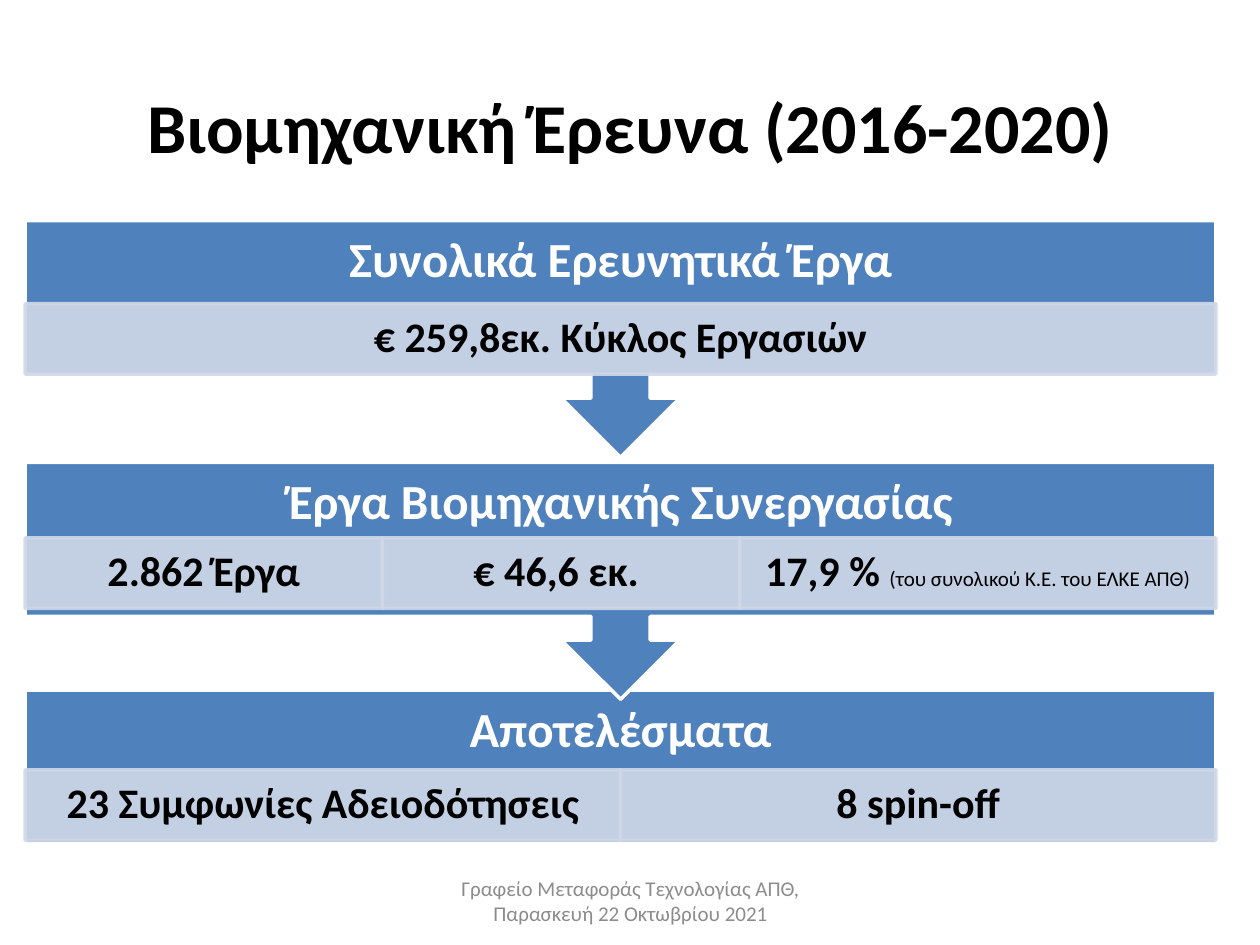
from dataclasses import dataclass
from itertools import accumulate

from lxml.etree import SubElement
from pptx import Presentation
from pptx.dml.color import RGBColor
from pptx.enum.shapes import MSO_SHAPE
from pptx.enum.text import MSO_ANCHOR, PP_ALIGN
from pptx.oxml.ns import qn
from pptx.util import Inches, Pt


@dataclass(frozen=True)
class Theme:
    font: str = "Calibri"
    black: RGBColor = RGBColor(0x00, 0x00, 0x00)
    white: RGBColor = RGBColor(0xFF, 0xFF, 0xFF)
    gray: RGBColor = RGBColor(0x8C, 0x8C, 0x8C)
    blue: RGBColor = RGBColor(0x4F, 0x81, 0xBD)
    pale: RGBColor = RGBColor(0xD0, 0xD8, 0xE8)
    title_size: int = 40
    heading_size: int = 28
    figure_size: int = 24
    small_size: int = 12
    line_width: int = 2
    pale_opacity: int = 90


THEME = Theme()


@dataclass(frozen=True)
class Box:
    left: float
    top: float
    width: float
    height: float

    def emu(self):
        return [Inches(v) for v in (self.left, self.top, self.width, self.height)]


def write_text(shape, runs, color, insets=(0.1, 0.05), spacing=1.0):
    frame = shape.text_frame
    frame.word_wrap = True
    frame.vertical_anchor = MSO_ANCHOR.MIDDLE
    frame.margin_left = frame.margin_right = Inches(insets[0])
    frame.margin_top = frame.margin_bottom = Inches(insets[1])
    paragraph = frame.paragraphs[0]
    paragraph.alignment = PP_ALIGN.CENTER
    paragraph.line_spacing = spacing
    for text, size, bold in runs:
        run = paragraph.add_run()
        run.text = text
        run.font.name = THEME.font
        run.font.size = Pt(size)
        run.font.bold = bold
        run.font.color.rgb = color


def add_label(slide, box, runs, color, **layout):
    write_text(slide.shapes.add_textbox(*box.emu()), runs, color, **layout)


def add_block(slide, kind, box, fill, line, opacity=100):
    shape = slide.shapes.add_shape(kind, *box.emu())
    shape.shadow.inherit = False
    shape.fill.solid()
    shape.fill.fore_color.rgb = fill
    shape.line.color.rgb = line
    shape.line.width = Pt(THEME.line_width)
    if opacity < 100:
        for color in shape._element.spPr.iter(qn("a:srgbClr")):
            SubElement(color, qn("a:alpha"), val=str(opacity * 1000))
    return shape


def add_figures(slide, box, figures, shares):
    widths = [box.width * share / sum(shares) for share in shares]
    offsets = accumulate(widths[:-1], initial=0)
    for runs, width, offset in zip(figures, widths, offsets):
        cell = Box(box.left + offset, box.top, width, box.height)
        shape = add_block(slide, MSO_SHAPE.RECTANGLE, cell, THEME.pale,
                          THEME.pale, THEME.pale_opacity)
        write_text(shape, runs, THEME.black, insets=(0.19, 0.03), spacing=0.9)


def add_stage(slide, box, heading, figures, shares, figures_offset, leads_on):
    kind = MSO_SHAPE.UP_ARROW_CALLOUT if leads_on else MSO_SHAPE.RECTANGLE
    block = add_block(slide, kind, box, THEME.blue, THEME.white)
    block.rotation = 180 if leads_on else 0
    add_label(slide, Box(box.left, box.top, box.width, 0.66),
              [(heading, THEME.heading_size, True)], THEME.white,
              insets=(0.22, 0.22), spacing=0.9)
    add_figures(slide, Box(box.left, box.top + figures_offset, box.width, 0.56),
                figures, shares)


def add_process(slide, box):
    def figure(text):
        return (text, THEME.figure_size, True)

    note = ("(του συνολικού Κ.Ε. του ΕΛΚΕ ΑΠΘ)", THEME.small_size, False)
    stages = [
        (3.73, 1.22, "Αποτελέσματα",
         [[figure("23 Συμφωνίες Αδειοδότησεις")], [figure("8 spin-off")]],
         (1, 1), 0.63, False),
        (1.92, 1.88, "Έργα Βιομηχανικής Συνεργασίας",
         [[figure("2.862 Έργα")], [figure("€ 46,6 εκ. ")], [figure("17,9 % "), note]],
         (3, 3, 4), 0.6, True),
        (0, 1.88, "Συνολικά Ερευνητικά Έργα",
         [[figure("€ 259,8εκ. Κύκλος Εργασιών")]],
         (1,), 0.66, True),
    ]
    for offset, height, *content in stages:
        add_stage(slide, Box(box.left, box.top + offset, box.width, height), *content)


def add_title(slide, box):
    add_label(slide, box, [("Βιομηχανική Έρευνα (2016-2020)", THEME.title_size, True)],
              THEME.black)


def add_footer(slide, box):
    add_label(slide, box,
              [("Γραφείο Μεταφοράς Τεχνολογίας ΑΠΘ, Παρασκευή 22 Οκτωβρίου 2021",
                THEME.small_size, False)], THEME.gray)


def main():
    presentation = Presentation()
    presentation.slide_width = Inches(10)
    presentation.slide_height = Inches(7.5)
    slide = presentation.slides.add_slide(presentation.slide_layouts[6])
    add_title(slide, Box(0.5, 0.44, 9, 1.11))
    add_process(slide, Box(0.2, 1.75, 9.45, 4.95))
    add_footer(slide, Box(3.42, 6.95, 3.17, 0.4))
    presentation.save("out.pptx")


if __name__ == "__main__":
    main()
